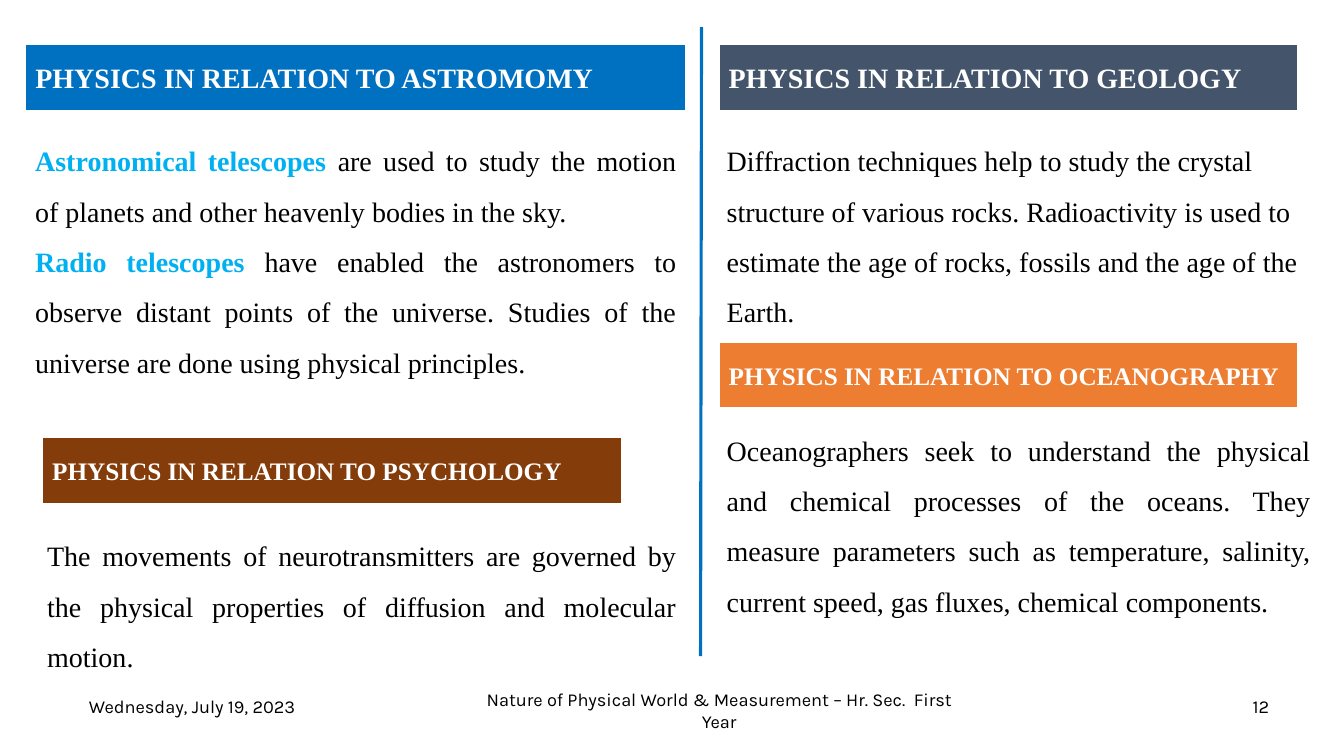
from dataclasses import dataclass

from lxml import etree
from pptx import Presentation
from pptx import util as u
from pptx.dml.color import RGBColor
from pptx.enum import shapes, text
from pptx.oxml.ns import qn


@dataclass(frozen=True)
class Theme:
    serif: str = "Times New Roman"
    sans: str = "Karla"
    black: str = "000000"
    white: str = "FFFFFF"
    blue: str = "0070C0"
    sky: str = "00B0F0"
    slate: str = "44546A"
    orange: str = "ED7D31"
    brown: str = "843C0B"
    body: int = 20
    small_heading: int = 18
    footer: int = 13


class Page:
    def __init__(self, slide, theme):
        self.slide = slide
        self.theme = theme

    def style(self, run, size, color, bold=False, font=None):
        run.font.name = font or self.theme.serif
        run.font.size = u.Pt(size)
        run.font.bold = bold
        run.font.color.rgb = RGBColor.from_string(color)

    def banner(self, shape, wording, fill, size):
        shape.fill.solid()
        shape.fill.fore_color.rgb = RGBColor.from_string(fill)
        shape.line.color.rgb = RGBColor.from_string(self.theme.white)
        shape.line.width = u.Pt(1.5)
        frame = shape.text_frame
        frame.text = wording
        frame.word_wrap = True
        frame.auto_size = text.MSO_AUTO_SIZE.NONE
        frame.vertical_anchor = text.MSO_ANCHOR.MIDDLE
        frame.paragraphs[0].alignment = text.PP_ALIGN.LEFT
        self.style(frame.paragraphs[0].runs[0], size, self.theme.white, bold=True)

    def title(self, box, wording, fill, size):
        heading = self.slide.shapes.title
        heading.left, heading.top, heading.width, heading.height = map(u.Pt, box)
        self.banner(heading, wording, fill, size)

    def heading(self, box, wording, fill, size):
        heading = self.slide.shapes.add_shape(
            shapes.MSO_SHAPE.RECTANGLE, *map(u.Pt, box))
        heading.shadow.inherit = False
        self.banner(heading, wording, fill, size)

    def body(self, box, paragraphs, align=text.PP_ALIGN.JUSTIFY):
        """Each paragraph is a pair: highlighted lead (may be empty), plain rest."""
        frame = self.slide.shapes.add_textbox(*map(u.Pt, box)).text_frame
        frame.word_wrap = True
        for i, (lead, rest) in enumerate(paragraphs):
            paragraph = frame.add_paragraph() if i else frame.paragraphs[0]
            paragraph.alignment = align
            paragraph.line_spacing = 1.5
            for wording, color, bold in ((lead, self.theme.sky, True),
                                         (rest, self.theme.black, False)):
                if wording:
                    run = paragraph.add_run()
                    run.text = wording
                    self.style(run, self.theme.body, color, bold)

    def footer(self, box, wording):
        frame = self.slide.shapes.add_textbox(*map(u.Pt, box)).text_frame
        frame.text = wording
        frame.word_wrap = True
        frame.vertical_anchor = text.MSO_ANCHOR.MIDDLE
        frame.paragraphs[0].alignment = text.PP_ALIGN.CENTER
        self.style(frame.paragraphs[0].runs[0], self.theme.footer,
                   self.theme.black, font=self.theme.sans)

    def divider(self, start, end):
        rule = self.slide.shapes.add_connector(
            shapes.MSO_CONNECTOR.STRAIGHT, *map(u.Pt, start + end))
        rule.line.color.rgb = RGBColor.from_string(self.theme.blue)
        rule.line.width = u.Pt(2.25)
        etree.SubElement(rule.line._get_or_add_ln().getparent(), qn("a:effectLst"))


def main():
    deck = Presentation()
    deck.slide_width, deck.slide_height = u.Pt(960), u.Pt(540)
    theme = Theme()
    page = Page(deck.slides.add_slide(deck.slide_layouts[5]), theme)

    # Shared grid
    left, right, right_text = 18, 513.4, 512
    top, body_top = 31.7, 87.1
    wide, narrow, bar = 472.3, 414, 47.5
    right_width = 431.3

    # Footer
    page.footer((51.1, 490.3, 172.1, 28.8), "Wednesday, July 19, 2023")
    page.footer((885.6, 490.3, 30.2, 28.8), "12")
    page.footer((327.6, 493.2, 372.2, 28.8),
                "Nature of Physical World & Measurement – Hr. Sec.  First Year")

    # Astronomy
    page.title((left, top, wide, bar), "PHYSICS IN RELATION TO ASTROMOMY",
               theme.blue, theme.body)
    page.divider((501.1, 19.4), (500.4, 468.7))
    page.body((left, body_top, wide, 225.4), [
        ("Astronomical telescopes ",
         "are used to study the motion of planets and other heavenly bodies "
         "in the sky. "),
        ("Radio telescopes ",
         "have enabled the astronomers to observe distant points of the universe. "
         "Studies of the universe are done using physical principles. "),
    ])

    # Geology
    page.heading((right, top, narrow, bar), "PHYSICS IN RELATION TO GEOLOGY",
                 theme.slate, theme.body)
    page.body((right_text, body_top, right_width, 152.6), [
        ("", "Diffraction techniques help to study the crystal structure of various "
             "rocks. Radioactivity is used to estimate the age of rocks, fossils "
             "and the age of the Earth."),
    ], text.PP_ALIGN.LEFT)

    # Oceanography
    page.heading((right, 244.1, narrow, bar), "PHYSICS IN RELATION TO OCEANOGRAPHY",
                 theme.orange, theme.small_heading)
    page.body((right_text, 293.8, right_width, 184.3), [
        ("", "Oceanographers seek to understand the physical and chemical processes "
             "of the oceans. They measure parameters such as temperature, salinity, "
             "current speed, gas fluxes, chemical components. "),
    ])

    # Psychology
    page.heading((30.2, 312.5, narrow, bar), "PHYSICS IN RELATION TO PSYCHOLOGY",
                 theme.brown, theme.small_heading)
    page.body((26.6, 369.2, 463.7, 112), [
        ("", "The movements of neurotransmitters are governed by the physical "
             "properties of diffusion and molecular motion. "),
    ])

    deck.save("out.pptx")


if __name__ == "__main__":
    main()
